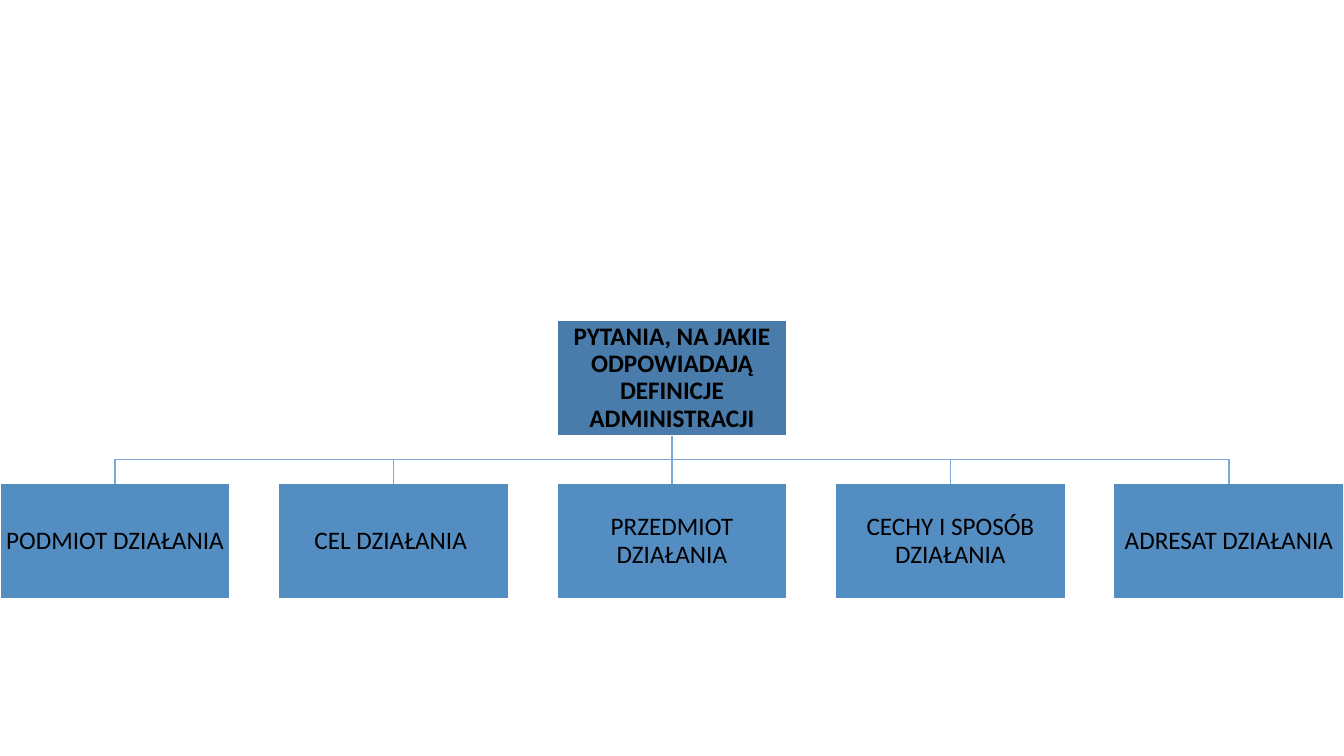
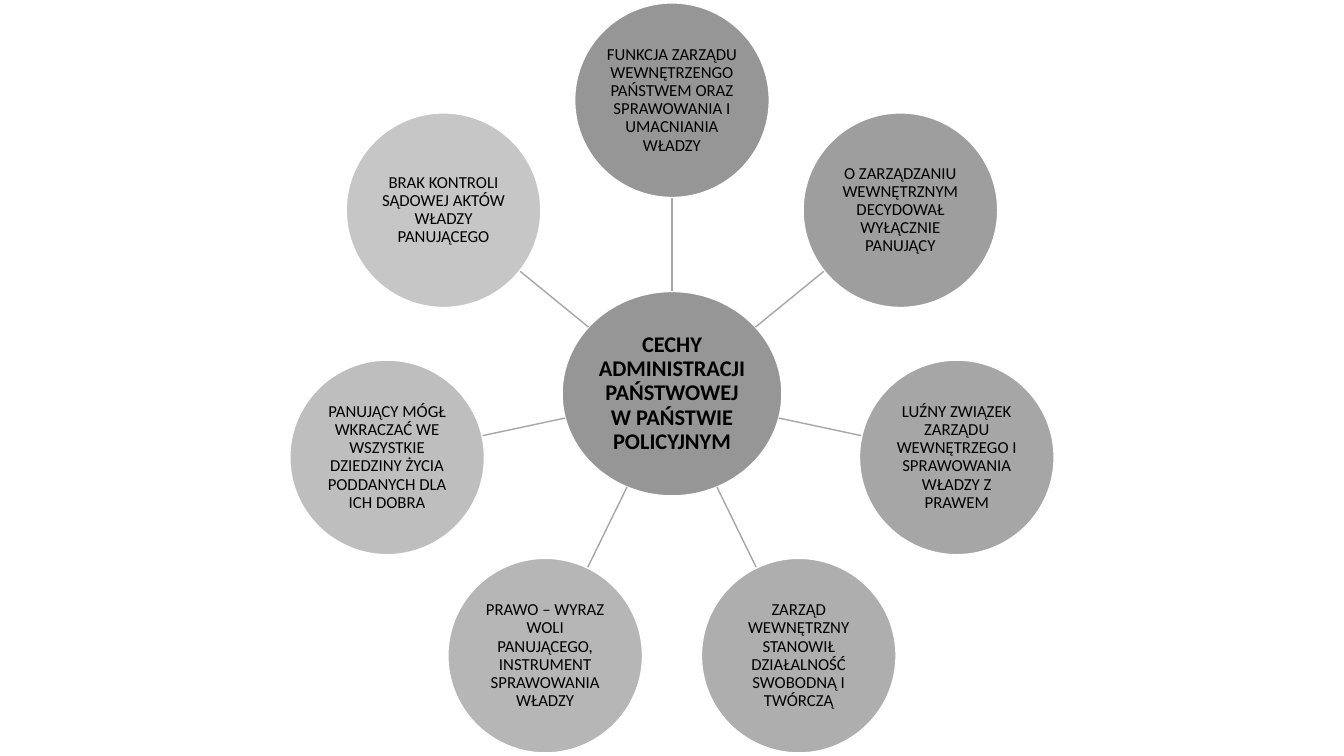
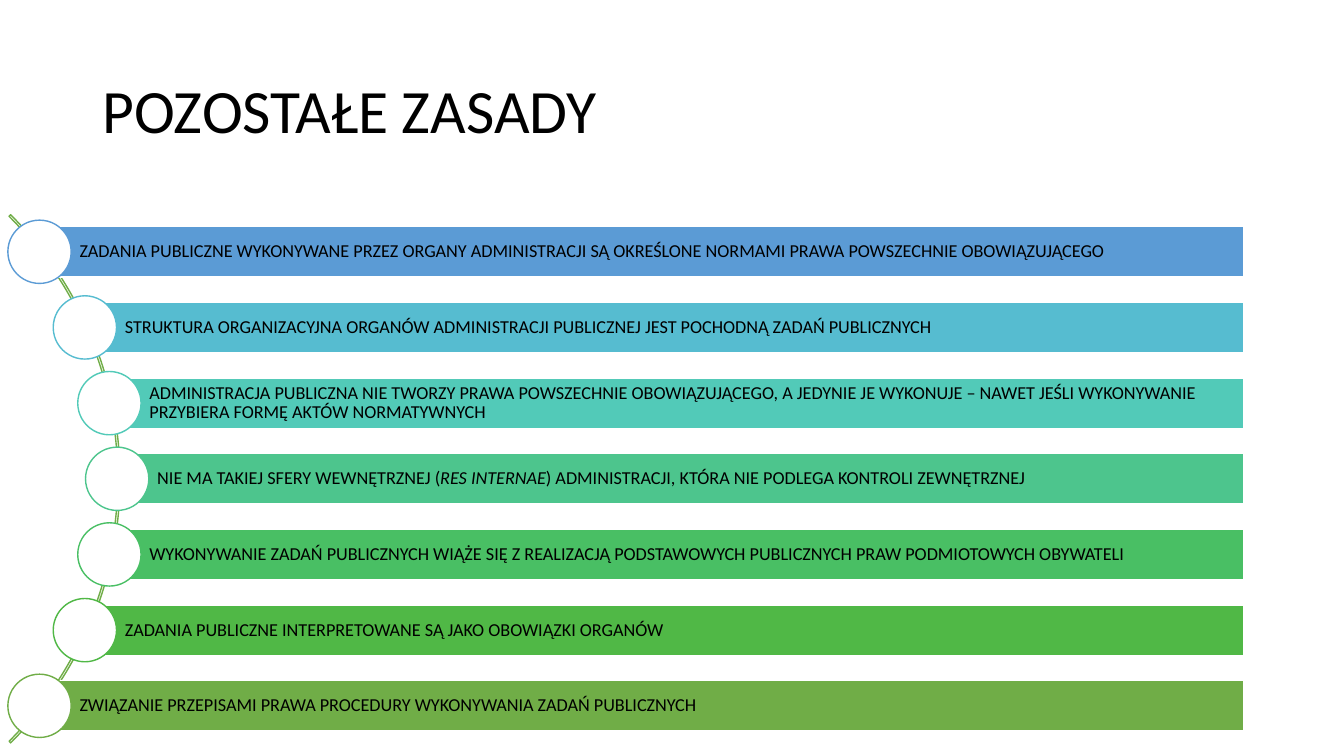
import math

import lxml.etree
import pptx
import pptx.dml.color
import pptx.enum.shapes
import pptx.enum.text
import pptx.oxml.ns
import pptx.util

Pt = pptx.util.Pt
SHAPE = pptx.enum.shapes.MSO_SHAPE
STRAIGHT = pptx.enum.shapes.MSO_CONNECTOR.STRAIGHT
ALIGN = pptx.enum.text.PP_ALIGN
RGB = pptx.dml.color.RGBColor.from_string

FONT = "Calibri"
COLOURS = {
    "text": "000000",
    "white": "FFFFFF",
    "root": "497CAB",
    "child": "538DC1",
    "branch": "7AA9DA",
    "hub": "969696",
    "spoke": "A6A6A6",
    "arc": "70AD47",
}
WIDTH, HEIGHT = 960, 540


def write(shape, text, size=18, bold=False, align=ALIGN.CENTER, insets=(0.72,) * 4):
    """Fill a shape with one paragraph; parts between asterisks are italic."""
    frame = shape.text_frame
    frame.word_wrap = True
    frame.auto_size = pptx.enum.text.MSO_AUTO_SIZE.NONE
    frame.vertical_anchor = pptx.enum.text.MSO_ANCHOR.MIDDLE
    frame.margin_left, frame.margin_top, frame.margin_right, frame.margin_bottom = map(Pt, insets)
    para = frame.paragraphs[0]
    para.alignment = align
    para.line_spacing = 0.9
    for number, part in enumerate(text.split("*")):
        span = para.add_run()
        span.text = part
        span.font.name = FONT
        span.font.size = Pt(size)
        span.font.bold = bold
        span.font.italic = number % 2 == 1
        span.font.color.rgb = RGB(COLOURS["text"])


def add_block(page, kind, left, top, width, height, fill=None, line=COLOURS["white"]):
    box = page.shapes.add_shape(kind, Pt(left), Pt(top), Pt(width), Pt(height))
    box.shadow.inherit = False
    if fill:
        box.fill.solid()
        box.fill.fore_color.rgb = RGB(fill)
    else:
        box.fill.background()
    box.line.color.rgb = RGB(line)
    box.line.width = Pt(1)
    return box


deck = pptx.Presentation()
deck.slide_width, deck.slide_height = Pt(WIDTH), Pt(HEIGHT)
title_layout, blank_layout = deck.slide_layouts[5], deck.slide_layouts[6]
connectors = []

# Slide 1: questions as a tree
page = deck.slides.add_slide(blank_layout)
questions = [
    "PODMIOT DZIAŁANIA",
    "CEL DZIAŁANIA ",
    "PRZEDMIOT DZIAŁANIA",
    "CECHY I SPOSÓB DZIAŁANIA",
    "ADRESAT DZIAŁANIA",
]
box_width, box_height = 164.4, 82.2
root_x, root_top, child_top = WIDTH / 2, 229, 345.6
root_bottom = root_top + box_height
bend_y = (root_bottom + child_top) / 2
step = (WIDTH - box_width) / (len(questions) - 1)
middle = len(questions) // 2

root = add_block(page, SHAPE.RECTANGLE, root_x - box_width / 2, root_top,
                 box_width, box_height, COLOURS["root"])
write(root, "PYTANIA, NA JAKIE ODPOWIADAJĄ DEFINICJE ADMINISTRACJI", bold=True)

for index, question in enumerate(questions):
    left = index * step
    child = add_block(page, SHAPE.RECTANGLE, left, child_top, box_width, box_height,
                      COLOURS["child"])
    write(child, question)
    x = left + box_width / 2
    if index == middle:
        trunk = page.shapes.add_connector(STRAIGHT, Pt(x), Pt(root_bottom), Pt(x), Pt(child_top))
        trunk.begin_connect(root, 2)
        trunk.end_connect(child, 0)
        connectors.append((trunk, COLOURS["branch"]))
        continue
    outline = page.shapes.build_freeform(Pt(root_x), Pt(root_bottom))
    corners = [(root_x, bend_y), (x, bend_y), (x, child_top)]
    outline.add_line_segments([(Pt(across), Pt(down)) for across, down in corners], close=False)
    branch = outline.convert_to_shape()
    branch.shadow.inherit = False
    branch.fill.background()
    branch.line.color.rgb = RGB(COLOURS["branch"])
    branch.line.width = Pt(1)

# Slide 2: features around a hub
page = deck.slides.add_slide(blank_layout)
features = [
    "FUNKCJA ZARZĄDU WEWNĘTRZENGO PAŃSTWEM ORAZ SPRAWOWANIA I UMACNIANIA WŁADZY",
    "O ZARZĄDZANIU WEWNĘTRZNYM DECYDOWAŁ WYŁĄCZNIE PANUJĄCY",
    "LUŹNY ZWIĄZEK ZARZĄDU WEWNĘTRZEGO I SPRAWOWANIA WŁADZY Z PRAWEM",
    "ZARZĄD WEWNĘTRZNY STANOWIŁ DZIAŁALNOŚĆ SWOBODNĄ I TWÓRCZĄ",
    "PRAWO – WYRAZ WOLI PANUJĄCEGO, INSTRUMENT SPRAWOWANIA WŁADZY",
    "PANUJĄCY MÓGŁ WKRACZAĆ WE WSZYSTKIE DZIEDZINY ŻYCIA PODDANYCH DLA ICH DOBRA",
    "BRAK KONTROLI SĄDOWEJ AKTÓW WŁADZY PANUJĄCEGO",
]
hub_x, hub_y, ring_y = WIDTH / 2, 281.2, 280.3
hub_width, hub_height = 157, 146
circle_size, ring_radius = 139, 208.7

hub = add_block(page, SHAPE.OVAL, hub_x - hub_width / 2, hub_y - hub_height / 2,
                hub_width, hub_height, COLOURS["hub"])
write(hub, "CECHY ADMINISTRACJI PAŃSTWOWEJ W PAŃSTWIE POLICYJNYM", size=16, bold=True)

for index, feature in enumerate(features):
    angle = 2 * math.pi * index / len(features)
    across, down = math.sin(angle), -math.cos(angle)
    hub_edge = 1 / math.hypot(across / (hub_width / 2), down / (hub_height / 2))
    circle_edge = ring_radius - circle_size / 2
    spoke = page.shapes.add_connector(
        STRAIGHT,
        Pt(hub_x + hub_edge * across), Pt(hub_y + hub_edge * down),
        Pt(hub_x + circle_edge * across), Pt(ring_y + circle_edge * down))
    connectors.append((spoke, COLOURS["spoke"]))
    grey = f"{150 + 8 * index:02X}" * 3
    circle = add_block(page, SHAPE.OVAL,
                       hub_x + ring_radius * across - circle_size / 2,
                       ring_y + ring_radius * down - circle_size / 2,
                       circle_size, circle_size, grey)
    write(circle, feature, size=12)

# Slide 3: principles along an arc
page = deck.slides.add_slide(title_layout)
title = page.shapes.title
title.left, title.top, title.width, title.height = Pt(66), Pt(28.75), Pt(828), Pt(104.4)
write(title, "POZOSTAŁE ZASADY", size=44, align=ALIGN.LEFT, insets=(7.2, 3.6, 7.2, 3.6))

principles = [
    ("5B9BD5", "ZADANIA PUBLICZNE WYKONYWANE PRZEZ ORGANY ADMINISTRACJI SĄ OKREŚLONE "
               "NORMAMI PRAWA POWSZECHNIE OBOWIĄZUJĄCEGO"),
    ("56BCD0", "STRUKTURA ORGANIZACYJNA ORGANÓW ADMINISTRACJI PUBLICZNEJ JEST POCHODNĄ "
               "ZADAŃ PUBLICZNYCH"),
    ("52CAB8", "ADMINISTRACJA PUBLICZNA NIE TWORZY PRAWA POWSZECHNIE OBOWIĄZUJĄCEGO, "
               "A JEDYNIE JE WYKONUJE – NAWET JEŚLI WYKONYWANIE PRZYBIERA FORMĘ "
               "AKTÓW NORMATYWNYCH"),
    ("4DC58D", "NIE MA TAKIEJ SFERY WEWNĘTRZNEJ (*RES INTERNAE*) ADMINISTRACJI, "
               "KTÓRA NIE PODLEGA KONTROLI ZEWNĘTRZNEJ"),
    ("49BF64", "WYKONYWANIE ZADAŃ PUBLICZNYCH WIĄŻE SIĘ Z REALIZACJĄ PODSTAWOWYCH "
               "PUBLICZNYCH PRAW PODMIOTOWYCH OBYWATELI"),
    ("50B846", "ZADANIA PUBLICZNE INTERPRETOWANE SĄ JAKO OBOWIĄZKI ORGANÓW"),
    ("70AD47", "ZWIĄZANIE PRZEPISAMI PRAWA PROCEDURY WYKONYWANIA ZADAŃ PUBLICZNYCH"),
]
arc_x, arc_y, arc_size = -181, 342, 533.5
marker_radius, marker_size = 264.7, 45.2
bar_right, bar_height, row_pitch = 888.6, 36, 54.05

arc = add_block(page, SHAPE.BLOCK_ARC, arc_x - arc_size / 2, arc_y - arc_size / 2,
                arc_size, arc_size, line=COLOURS["arc"])
for index, value in enumerate((189, 27, 0.003)):
    arc.adjustments[index] = value

for index, (colour, principle) in enumerate(principles):
    offset = (index - len(principles) // 2) * row_pitch
    x = arc_x + math.sqrt(marker_radius ** 2 - offset ** 2)
    y = arc_y + offset
    bar = add_block(page, SHAPE.RECTANGLE, x, y - bar_height / 2, bar_right - x, bar_height,
                    colour)
    write(bar, principle, size=13, align=ALIGN.LEFT, insets=(28.6, 2.6, 2.6, 2.6))
    add_block(page, SHAPE.OVAL, x - marker_size / 2, y - marker_size / 2,
              marker_size, marker_size, COLOURS["white"], colour)

for connector, colour in connectors:
    connector.line.color.rgb = RGB(colour)
    connector.line.width = Pt(1)
    lxml.etree.SubElement(connector._element.spPr, pptx.oxml.ns.qn("a:effectLst"))

deck.save("out.pptx")
